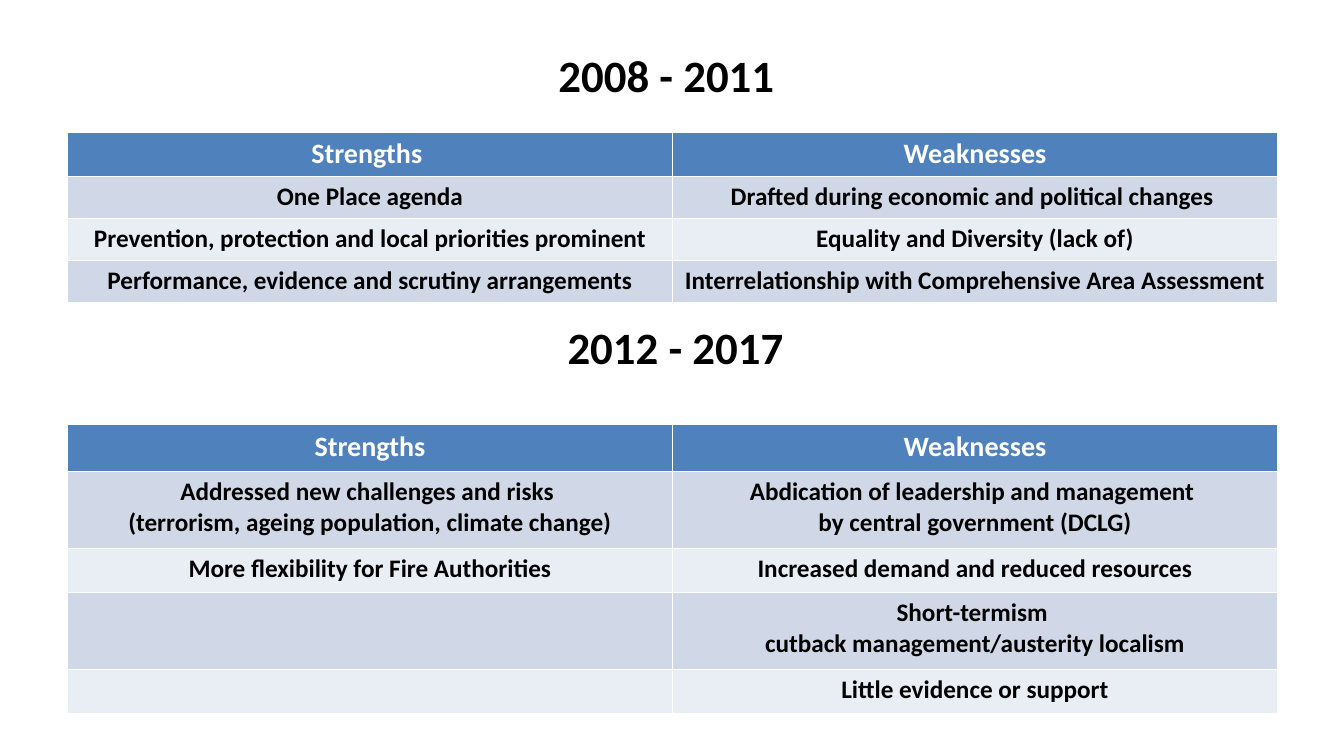
"""Build a slide comparing strengths and weaknesses over two periods."""
import pptx
import pptx.dml.color
import pptx.enum.text
import pptx.util

Inches = pptx.util.Inches
COLORS = {
    "header": "4F81BD",
    "band_dark": "D0D8E8",
    "band_light": "E9EDF4",
    "white": "FFFFFF",
    "black": "000000",
}


def rgb(name):
    return pptx.dml.color.RGBColor.from_string(COLORS[name])


def format_text(text_frame, size, color):
    for paragraph in text_frame.paragraphs:
        paragraph.alignment = pptx.enum.text.PP_ALIGN.CENTER
        for run in paragraph.runs:
            run.font.name = "Calibri"
            run.font.size = pptx.util.Pt(size)
            run.font.bold = True
            run.font.color.rgb = rgb(color)


presentation = pptx.Presentation()
presentation.slide_width = Inches(13.33)
presentation.slide_height = Inches(7.5)
slide = presentation.slides.add_slide(presentation.slide_layouts[5])

tables = [
    (1.31, [1.67 / 4] * 4, [
        ("Strengths ", "Weaknesses"),
        ("One Place agenda", "Drafted during economic and political changes "),
        ("Prevention, protection and local priorities prominent",
         "Equality and Diversity (lack of)"),
        ("Performance, evidence and scrutiny arrangements",
         "Interrelationship with Comprehensive Area Assessment"),
    ]),
    (4.21, [0.47, 0.76, 0.44, 0.76, 0.44], [
        ("Strengths", "Weaknesses"),
        ("Addressed new challenges and risks \n(terrorism, ageing population, climate change)",
         "Abdication of leadership and management \nby central government (DCLG)"),
        ("More flexibility for Fire Authorities", "Increased demand and reduced resources"),
        ("", "Short-termism \ncutback management/austerity localism"),
        ("", "Little evidence or support"),
    ]),
]

for top, heights, rows in tables:
    frame = slide.shapes.add_table(
        len(rows), 2, Inches(0.67), Inches(top), Inches(12), Inches(sum(heights)))
    table = frame.table
    for row_index, (height, texts) in enumerate(zip(heights, rows)):
        table.rows[row_index].height = Inches(height)
        if row_index == 0:
            fill, size, color = "header", 20, "white"
        else:
            fill = "band_dark" if row_index % 2 else "band_light"
            size, color = 18, "black"
        for column_index, text in enumerate(texts):
            cell = table.cell(row_index, column_index)
            cell.fill.solid()
            cell.fill.fore_color.rgb = rgb(fill)
            if text:
                cell.text_frame.text = text
                format_text(cell.text_frame, size, color)

first_heading = slide.shapes.title
second_heading = slide.shapes.add_textbox(0, 0, 0, 0)
headings = [
    (first_heading, "2008 - 2011", 4.33, 0.42, 4.56),
    (second_heading, "2012 - 2017", 5.16, 3.12, 3.08),
]
for shape, text, left, top, width in headings:
    shape.left, shape.top = Inches(left), Inches(top)
    shape.width, shape.height = Inches(width), Inches(0.64)
    shape.text_frame.text = text
    shape.text_frame.word_wrap = True
    shape.text_frame.vertical_anchor = pptx.enum.text.MSO_ANCHOR.TOP
    format_text(shape.text_frame, 32, "black")

presentation.save("out.pptx")
